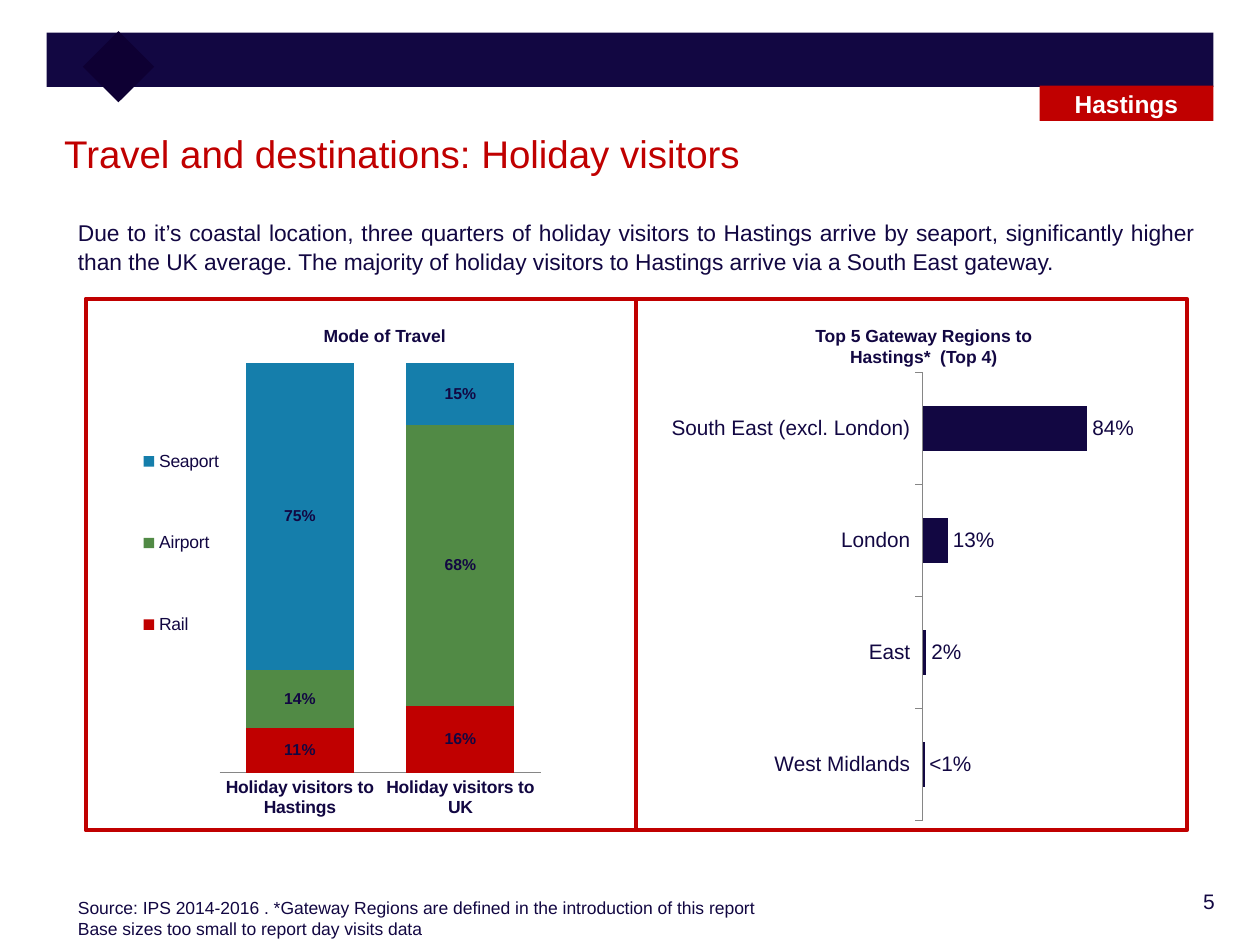
from lxml import etree
from pptx import Presentation
from pptx.chart.data import CategoryChartData
from pptx.dml.color import RGBColor
from pptx.enum.chart import XL_CHART_TYPE, XL_LABEL_POSITION, XL_LEGEND_POSITION, XL_TICK_MARK
from pptx.enum.shapes import MSO_SHAPE
from pptx.enum.text import MSO_ANCHOR, PP_ALIGN
from pptx.oxml.ns import qn
from pptx.util import Inches, Pt

COLORS = {name: RGBColor.from_string(value) for name, value in {
    "navy": "120742", "dark": "0E0033", "red": "C00000", "green": "518A45",
    "blue": "157EAB", "white": "FFFFFF", "axis": "868686"}.items()}


def style(font, size, color="navy", bold=False, name="Arial"):
    font.name, font.size, font.bold = name, Pt(size), bold
    font.color.rgb = COLORS[color]


def set_layout(parent, position, before, inner=False):
    """Fix the place of a chart part, as fractions of the chart's size."""
    for old in parent.findall(qn("c:layout")):
        parent.remove(old)
    layout = etree.Element(qn("c:layout"))
    manual = etree.SubElement(layout, qn("c:manualLayout"))
    settings = [("layoutTarget", "inner")] if inner else []
    settings += [("xMode", "edge"), ("yMode", "edge"), *zip("xywh", position)]
    for tag, value in settings:
        etree.SubElement(manual, qn(f"c:{tag}")).set("val", str(value))
    parent.find(qn(before)).addprevious(layout)


deck = Presentation()
deck.slide_width, deck.slide_height = Inches(10), Inches(7.5)
page = deck.slides.add_slide(deck.slide_layouts[5])

# Title
title = page.shapes.title
title.left, title.top, title.width, title.height = map(Inches, (0.41, 0.95, 9.21, 0.61))
title.text_frame.text = "Travel and destinations: Holiday visitors"
title.text_frame.vertical_anchor = MSO_ANCHOR.TOP
title.text_frame.margin_top = Inches(0.08)
title.text_frame.paragraphs[0].alignment = PP_ALIGN.LEFT
style(title.text_frame.paragraphs[0].runs[0].font, 22, "red")

# Header, place label and chart frames: position, fill, line, rotation
rectangles = [
    ((0.37, 0.26, 9.26, 0.43), "navy", None, 0),
    ((0.74, 0.33, 0.4, 0.4), "dark", None, 45),
    ((0.68, 2.37, 4.37, 4.22), None, "red", 0),
    ((5.05, 2.37, 4.37, 4.22), None, "red", 0),
    ((8.25, 0.68, 1.38, 0.28), "red", None, 0),
]
for position, fill, line, rotation in rectangles:
    box = page.shapes.add_shape(MSO_SHAPE.RECTANGLE, *map(Inches, position))
    box.shadow.inherit = False
    box.rotation = rotation
    if fill:
        box.fill.solid()
        box.fill.fore_color.rgb = COLORS[fill]
    else:
        box.fill.background()
    if line:
        box.line.color.rgb = COLORS[line]
        box.line.width = Pt(2.25)
    else:
        box.line.fill.background()

place_label = box.text_frame
place_label.text = "Hastings"
place_label.vertical_anchor = MSO_ANCHOR.MIDDLE
place_label.paragraphs[0].alignment = PP_ALIGN.CENTER
style(place_label.paragraphs[0].runs[0].font, 14, "white", True)

# Texts: position, wording, size, bold, alignment, line spacing
texts = [
    ((8.53, 7, 1.21, 0.36), "5", 12, False, PP_ALIGN.RIGHT, 1),
    ((2.47, 2.53, 1.47, 0.31), "Mode of Travel", 10, True, PP_ALIGN.LEFT, 1),
    ((0.52, 1.67, 9.05, 0.74),
     "Due to it’s coastal location, three quarters of holiday visitors to Hastings arrive "
     "by seaport, significantly higher than the UK average. The majority of holiday "
     "visitors to Hastings arrive via a South East gateway.",
     13, False, PP_ALIGN.JUSTIFY, 1.07),
    ((6.27, 2.53, 2.12, 0.46), "Top 5 Gateway Regions to Hastings*  (Top 4)",
     10, True, PP_ALIGN.CENTER, 1),
    ((0.52, 7.07, 9.08, 0.44),
     "Source: IPS 2014-2016 . *Gateway Regions are defined in the introduction of this "
     "report\nBase sizes too small to report day visits data",
     10, False, PP_ALIGN.LEFT, 1),
]
for position, wording, size, bold, alignment, spacing in texts:
    box = page.shapes.add_textbox(*map(Inches, position))
    box.text_frame.word_wrap = True
    box.text_frame.text = wording
    for para in box.text_frame.paragraphs:
        para.alignment = alignment
        para.line_spacing = spacing
        style(para.runs[0].font, size, bold=bold)

# Mode of travel
travel_data = CategoryChartData(number_format="0%")
travel_data.categories = ["Holiday visitors to Hastings", "Holiday visitors to UK"]
travel_data.add_series("Rail", (0.11, 0.16))
travel_data.add_series("Airport", (0.14, 0.68))
travel_data.add_series("Seaport", (0.75, 0.15))
travel = page.shapes.add_chart(
    XL_CHART_TYPE.COLUMN_STACKED_100,
    *map(Inches, (0.91, 2.66, 3.53, 3.93)), travel_data).chart

# Gateway regions
gateway_data = CategoryChartData(number_format="0%")
gateway_data.categories = ["South East (excl. London)", "London", "East", "West Midlands"]
gateway_data.add_series("Series 1", (0.84, 0.13, 0.02, 0.01))
gateway = page.shapes.add_chart(
    XL_CHART_TYPE.BAR_CLUSTERED,
    *map(Inches, (5.33, 2.88, 3.67, 3.71)), gateway_data).chart

# Chart, series colours, gap, category size, label size, bold, tick marks, plot position
charts = [
    (travel, ("red", "green", "blue"), 49, 10, 9, True, XL_TICK_MARK.NONE,
     (0.236, 0.056, 0.722, 0.828)),
    (gateway, ("navy",), 150, 12, 12, False, XL_TICK_MARK.OUTSIDE,
     (0.54, 0.02, 0.43, 0.96)),
]
for chart, colors, gap, category_size, label_size, bold, tick, position in charts:
    style(chart.font, 10)
    chart.has_title = False
    chart.has_legend = False
    chart.value_axis.visible = False
    chart.value_axis.has_major_gridlines = False
    chart.value_axis.minimum_scale, chart.value_axis.maximum_scale = 0, 1
    chart.category_axis.major_tick_mark = tick
    chart.category_axis.format.line.color.rgb = COLORS["axis"]
    style(chart.category_axis.tick_labels.font, category_size, bold=bold)
    plot = chart.plots[0]
    plot.gap_width = gap
    plot.vary_by_categories = False
    for series, color in zip(plot.series, colors):
        series.format.fill.solid()
        series.format.fill.fore_color.rgb = COLORS[color]
        labels = series.data_labels
        labels.show_value = True
        labels.number_format, labels.number_format_is_linked = "0%", False
        style(labels.font, label_size, bold=bold)
    plot_area = chart.element.find(".//" + qn("c:plotArea"))
    set_layout(plot_area, position, "c:barChart", inner=True)

travel.plots[0].overlap = 100
travel.has_legend = True
travel.legend.position = XL_LEGEND_POSITION.LEFT
travel.legend.include_in_layout = False
style(travel.legend.font, 10)
set_layout(travel.element.find(".//" + qn("c:legend")), (0.05, 0.11, 0.2, 0.62), "c:overlay")

gateway.category_axis.reverse_order = True
regions = gateway.plots[0].series[0]
regions.data_labels.position = XL_LABEL_POSITION.OUTSIDE_END
smallest = regions.points[3].data_label
smallest.text_frame.text = "<1%"
style(smallest.text_frame.paragraphs[0].runs[0].font, 12)
smallest.position = XL_LABEL_POSITION.OUTSIDE_END

deck.save("out.pptx")
